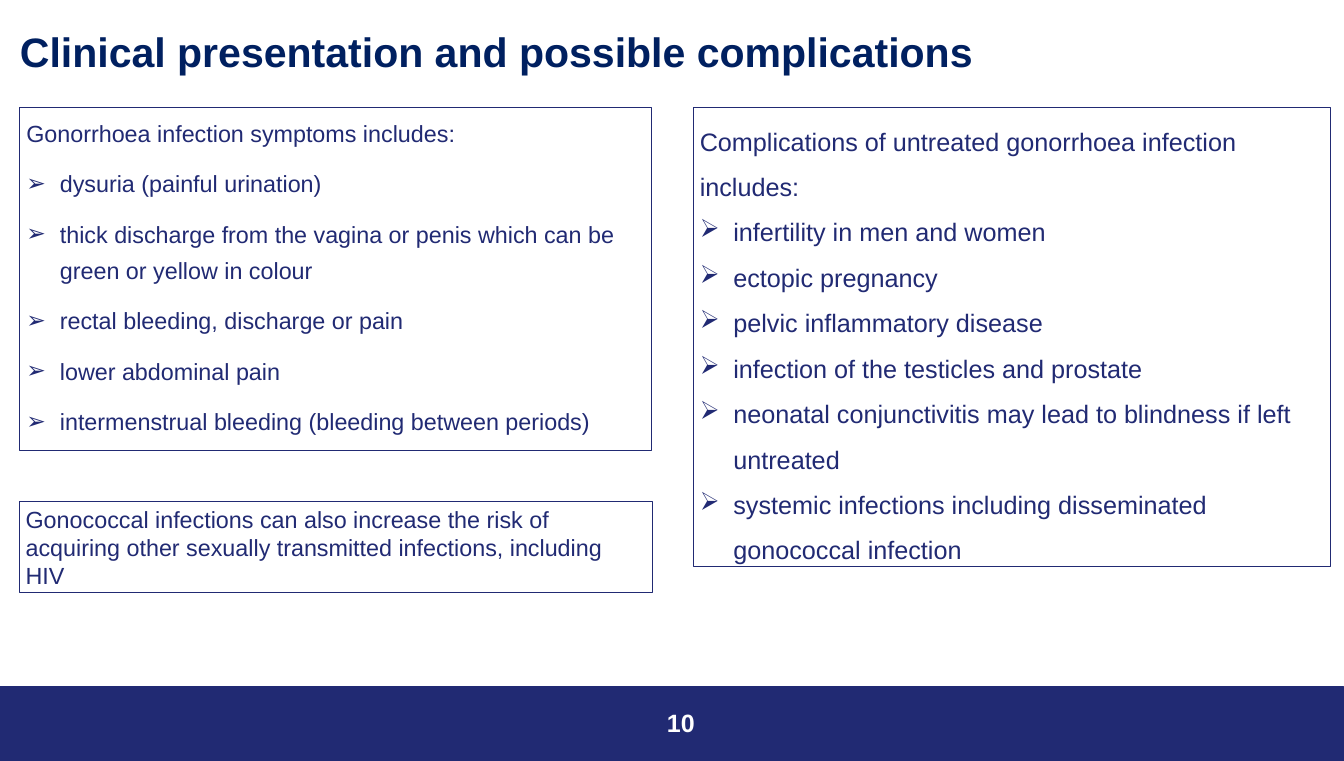
"""Build the slide on signs and complications of gonorrhoea."""
import pptx
import pptx.dml.color
import pptx.enum.shapes
import pptx.enum.text
import pptx.oxml.ns
import pptx.util
from lxml import etree

Cm, Pt = pptx.util.Cm, pptx.util.Pt
RGB = pptx.dml.color.RGBColor
NAVY = RGB(0x21, 0x2A, 0x73)
DEEP = RGB(0x00, 0x20, 0x60)
WHITE = RGB(0xFF, 0xFF, 0xFF)
LEFT = pptx.enum.text.PP_ALIGN.LEFT
RIGHT = pptx.enum.text.PP_ALIGN.RIGHT
TOP = pptx.enum.text.MSO_ANCHOR.TOP
MIDDLE = pptx.enum.text.MSO_ANCHOR.MIDDLE

SIGNS = [
    "Gonorrhoea infection symptoms includes:",
    "dysuria (painful urination)",
    "thick discharge from the vagina or penis which can be green or yellow in colour",
    "rectal bleeding, discharge or pain",
    "lower abdominal pain",
    "intermenstrual bleeding (bleeding between periods)",
]
RISKS = [
    "Complications of untreated gonorrhoea infection includes:",
    "infertility in men and women",
    "ectopic pregnancy",
    "pelvic inflammatory disease",
    "infection of the testicles and prostate",
    "neonatal conjunctivitis may lead to blindness if left untreated",
    "systemic infections including disseminated gonococcal infection",
]
NOTE = ("Gonococcal infections can also increase the risk of acquiring "
        "other sexually transmitted infections, including HIV")


def bullet(para, mark):
    """Give a paragraph a hanging bullet, or none."""
    props = para._p.get_or_add_pPr()
    hang = Cm(1.27) if mark else 0
    props.set("marL", str(hang))
    props.set("indent", str(-hang))
    tag = "a:buChar" if mark else "a:buNone"
    item = etree.SubElement(props, pptx.oxml.ns.qn(tag))
    if mark:
        item.set("char", mark)


def write(shape, lines, size=25, color=NAVY, bold=False, align=LEFT,
          anchor=TOP, pitch=1.0, gap=0):
    """Fill a shape with a lead line and any bulleted lines after it."""
    frame = shape.text_frame
    frame.word_wrap = True
    frame.auto_size = pptx.enum.text.MSO_AUTO_SIZE.NONE
    frame.vertical_anchor = anchor
    for rank, line in enumerate(lines):
        para = frame.add_paragraph() if rank else frame.paragraphs[0]
        bullet(para, "➢" if rank else None)
        para.alignment = align
        para.line_spacing = pitch
        para.space_before = Pt(gap if rank else 0)
        run = para.add_run()
        run.text = line
        font = run.font
        font.name, font.size, font.bold = "Arial", Pt(size), bold
        font.color.rgb = color


class Deck:
    """Hold the house style and the current slide."""

    def __init__(self, wide, high):
        """Open a deck of the given size with one slide."""
        self.show = pptx.Presentation()
        self.show.slide_width, self.show.slide_height = Cm(wide), Cm(high)
        self.slide = self.show.slides.add_slide(self.show.slide_layouts[1])

    def place(self, shape, area):
        """Move a shape to an area in centimetres."""
        shape.left, shape.top, shape.width, shape.height = map(Cm, area)

    def frame(self, shape):
        """Give a shape the white fill and thin navy line."""
        shape.fill.solid()
        shape.fill.fore_color.rgb = WHITE
        shape.line.color.rgb = NAVY
        shape.line.width = Pt(1)

    def title(self, text, area):
        """Set the slide title."""
        shape = self.slide.shapes.title
        self.place(shape, area)
        write(shape, [text], size=44, color=DEEP, bold=True,
              anchor=MIDDLE, pitch=0.9)

    def body(self, lines, area, **style):
        """Set the framed body list."""
        shape = self.slide.placeholders[1]
        self.place(shape, area)
        self.frame(shape)
        write(shape, lines, **style)

    def label(self, lines, area, framed=True, **style):
        """Add a text box, framed or plain."""
        shape = self.slide.shapes.add_textbox(*map(Cm, area))
        if framed:
            self.frame(shape)
        write(shape, lines, **style)

    def band(self, area):
        """Add a solid navy band."""
        kind = pptx.enum.shapes.MSO_SHAPE.RECTANGLE
        shape = self.slide.shapes.add_shape(kind, *map(Cm, area))
        self.frame(shape)
        shape.fill.fore_color.rgb = NAVY
        shape.shadow.inherit = False


def main():
    """Build and save the slide."""
    deck = Deck(50.8, 28.75)
    deck.title("Clinical presentation and possible complications",
               (0.5, 0.66, 49.8, 2.77))
    deck.body(SIGNS, (0.74, 4.06, 23.9, 12.95), pitch=1.3, gap=14.9)
    deck.label(RISKS, (26.2, 4.06, 24.1, 17.35), size=27, pitch=1.5)
    deck.label([NOTE], (0.72, 18.95, 23.95, 3.45))
    deck.band((0, 25.95, 50.8, 2.8))
    deck.label(["10"], (24.35, 26.6, 2.16, 1.52), framed=False,
               size=26.8, color=WHITE, bold=True, align=RIGHT)
    deck.show.save("out.pptx")


if __name__ == "__main__":
    main()
